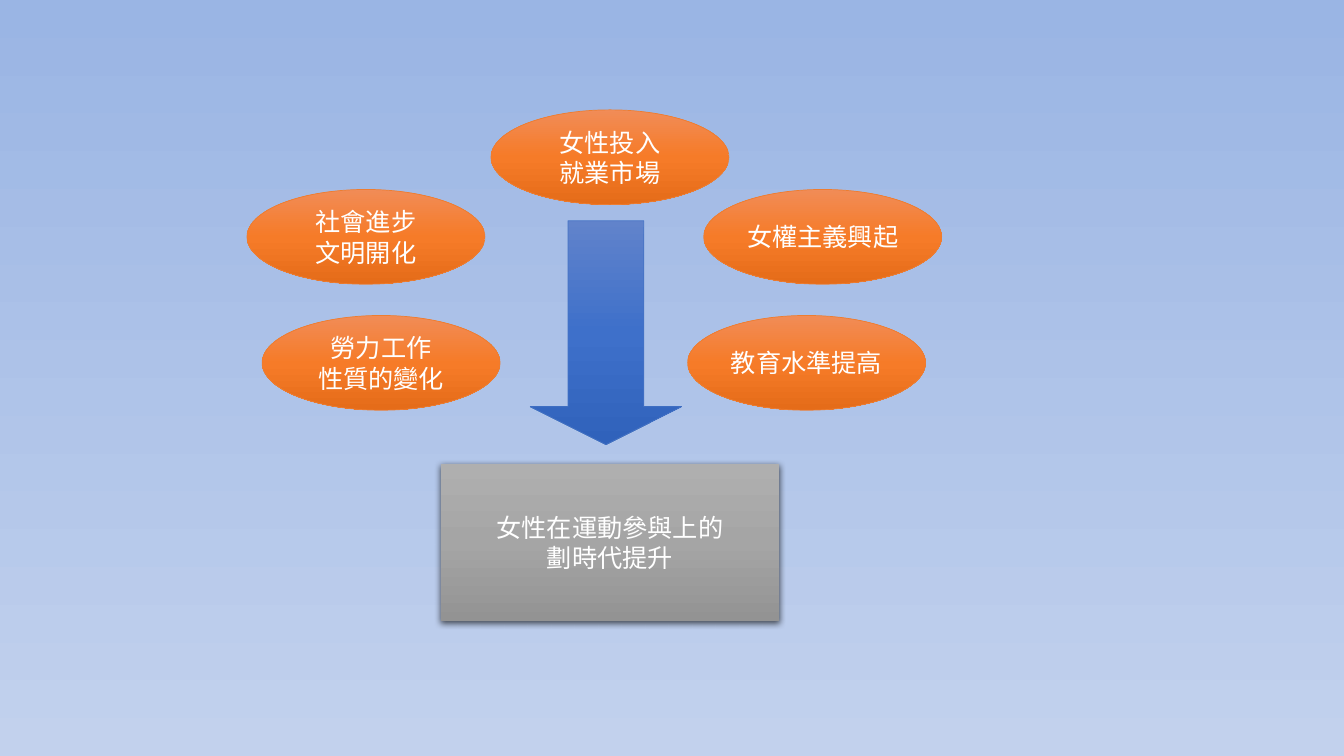
from lxml.etree import SubElement
from pptx import Presentation
from pptx.dml.color import RGBColor
from pptx.enum.shapes import MSO_SHAPE
from pptx.enum.text import MSO_ANCHOR, PP_ALIGN
from pptx.oxml.ns import qn
from pptx.util import Inches, Pt

FONT = "Cabin"
WHITE = RGBColor(0xFF, 0xFF, 0xFF)
BLACK = RGBColor(0x00, 0x00, 0x00)
ORANGE = RGBColor(0xED, 0x7D, 0x31)
BLUE = RGBColor(0x44, 0x72, 0xC4)
SKY_SHADES = (RGBColor(0x9A, 0xB5, 0xE4), RGBColor(0xC2, 0xD1, 0xED))
ORANGE_SHADES = (RGBColor(0xF1, 0x8C, 0x57), RGBColor(0xF6, 0x7B, 0x28), RGBColor(0xE5, 0x6C, 0x19))
BLUE_SHADES = (RGBColor(0x61, 0x83, 0xCB), RGBColor(0x3E, 0x70, 0xCA), RGBColor(0x30, 0x62, 0xBB))
GREY_SHADES = (RGBColor(0xAF, 0xAF, 0xAF), RGBColor(0xA5, 0xA5, 0xA5), RGBColor(0x93, 0x93, 0x93))

TOP_ROW, UPPER_ROW, LOWER_ROW = 1.09, 1.88, 3.13
CAUSE_SIZE = (2.36, 0.94)
CAUSES = [
    ("社會進步\n文明開化", 2.45, UPPER_ROW),
    ("女性投入\n就業市場", 4.87, TOP_ROW),
    ("勞力工作\n性質的變化", 2.6, LOWER_ROW),
    ("教育水準提高", 6.82, LOWER_ROW),
    ("女權主義興起", 6.98, UPPER_ROW),
]
ARROW_AREA = (5.26, 2.19, 1.5, 2.22)
RESULT = "女性在運動參與上的\n劃時代提升"
RESULT_AREA = (4.37, 4.6, 3.36, 1.56)


def shade(fill, element, colours):
    fill.gradient()
    fill.gradient_angle = 270
    stops = element.find(".//" + qn("a:gsLst"))
    stops.clear()
    for index, colour in enumerate(colours):
        position = 100000 * index // (len(colours) - 1)
        stop = SubElement(stops, qn("a:gs"), pos=str(position))
        SubElement(stop, qn("a:srgbClr"), val=str(colour))


def add_figure(page, kind, area, colours, line_colour=None):
    figure = page.shapes.add_shape(kind, *map(Inches, area))
    figure.shadow.inherit = False
    shade(figure.fill, figure.element, colours)
    if line_colour is None:
        figure.line.fill.background()
    else:
        figure.line.color.rgb = line_colour
        figure.line.width = Pt(0.5)
    return figure


def write(figure, text, wrap):
    frame = figure.text_frame
    frame.text = text
    frame.word_wrap = wrap
    frame.vertical_anchor = MSO_ANCHOR.MIDDLE
    for para in frame.paragraphs:
        para.alignment = PP_ALIGN.CENTER
        for span in para.runs:
            span.font.size = Pt(18)
            span.font.name = FONT
            span.font.color.rgb = WHITE
            SubElement(span.font._element, qn("a:ea"), typeface=FONT)


def cast_shadow(figure):
    effects = figure.element.spPr.find(qn("a:effectLst"))
    shadow = SubElement(effects, qn("a:outerShdw"), blurRad=str(Pt(4.5)),
                        dist=str(Pt(1.5)), dir="5400000", algn="ctr", rotWithShape="0")
    colour = SubElement(shadow, qn("a:srgbClr"), val=str(BLACK))
    SubElement(colour, qn("a:alpha"), val="63000")


def main():
    deck = Presentation()
    deck.slide_width, deck.slide_height = Inches(13.33), Inches(7.5)
    page = deck.slides.add_slide(deck.slide_layouts[6])
    shade(page.background.fill, page.element, SKY_SHADES)

    for text, left, top in CAUSES:
        cause = add_figure(page, MSO_SHAPE.OVAL, (left, top, *CAUSE_SIZE), ORANGE_SHADES, ORANGE)
        write(cause, text, False)

    arrow = add_figure(page, MSO_SHAPE.DOWN_ARROW, ARROW_AREA, BLUE_SHADES, BLUE)
    arrow.adjustments[0] = 0.5
    arrow.adjustments[1] = 0.25

    result = add_figure(page, MSO_SHAPE.RECTANGLE, RESULT_AREA, GREY_SHADES)
    cast_shadow(result)
    write(result, RESULT, True)

    deck.save("out.pptx")


if __name__ == "__main__":
    main()
